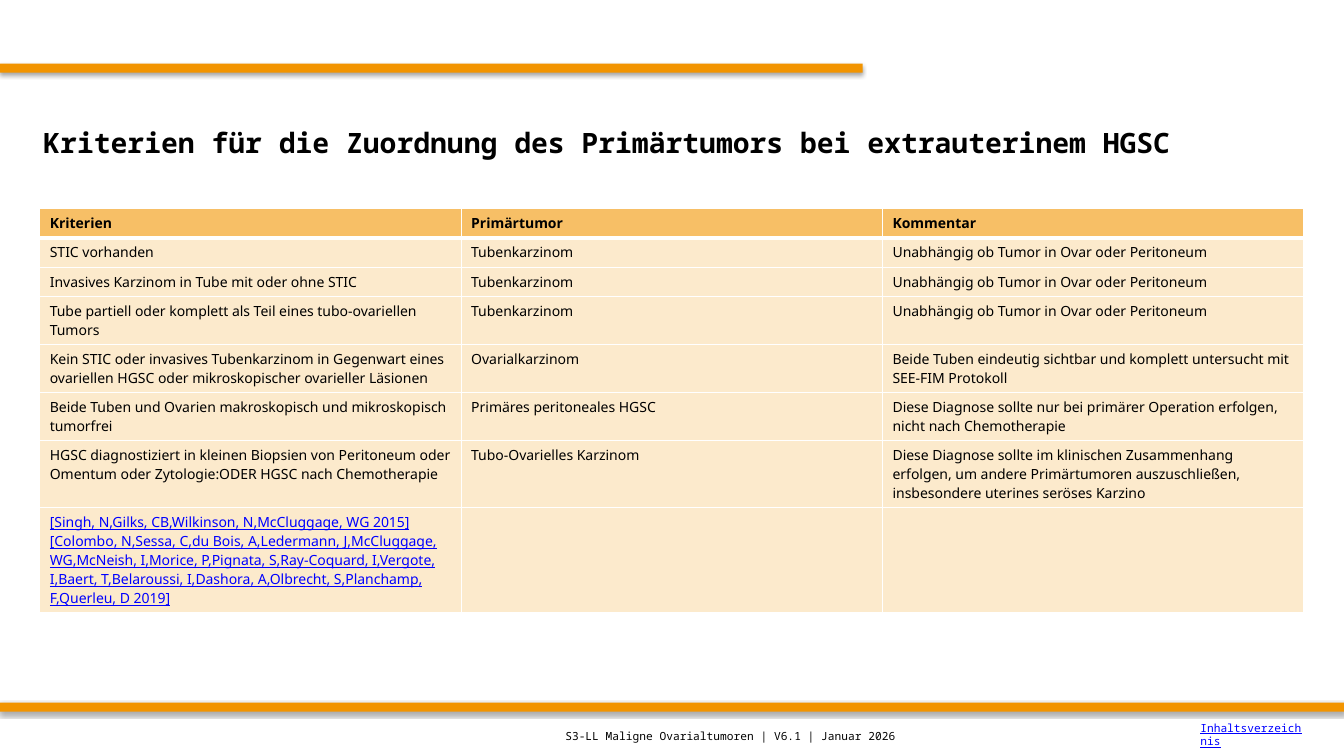
from dataclasses import dataclass

from lxml import etree
from pptx import Presentation
from pptx import util as u
from pptx.dml.color import RGBColor
from pptx.enum import shapes, text
from pptx.oxml import parse_xml
from pptx.oxml.ns import nsdecls, qn


@dataclass(frozen=True)
class Theme:
    bar: str = "F29400"
    header: str = "F7BF66"
    body: str = "FCEACC"
    ink: str = "000000"
    link: str = "0000FF"
    border: str = "FFFFFF"
    sans: str = "Noto Sans"
    mono: str = "Noto Sans Mono"
    title_size: float = 20
    table_size: float = 10
    footer_size: float = 8


theme = Theme()


def add_run(p, words, size, font, bold=False, link=False):
    r = p.add_run()
    r.text = words
    r.font.size = u.Pt(size)
    r.font.name = font
    r.font.bold = bold
    r.font.underline = link
    r.font.color.rgb = RGBColor.from_string(theme.link if link else theme.ink)


prs = Presentation()
prs.slide_width, prs.slide_height = u.Pt(960), u.Pt(540)
s = prs.slides.add_slide(prs.slide_layouts[5])

for top, width in ((45.4, 616.2), (501.8, 960)):
    sp = s.shapes.add_shape(shapes.MSO_SHAPE.RECTANGLE, 0, u.Pt(top), u.Pt(width), u.Pt(6.5))
    sp.fill.solid()
    sp.fill.fore_color.rgb = RGBColor.from_string(theme.bar)
    sp.line.fill.background()
    sp.shadow.inherit = False
    effects = sp.element.spPr.find(qn("a:effectLst"))
    effects.append(parse_xml(
        f'<a:outerShdw {nsdecls("a")} blurRad="{u.Pt(3.1)}" dist="{u.Pt(1.8)}" dir="5400000" rotWithShape="0">'
        '<a:srgbClr val="000000"><a:alpha val="35000"/></a:srgbClr></a:outerShdw>'))

title = s.shapes.title
title.left, title.top, title.width, title.height = u.Pt(23.8), u.Pt(59.8), u.Pt(912), u.Pt(84)
tf = title.text_frame
tf.word_wrap = True
tf.auto_size = text.MSO_AUTO_SIZE.NONE
tf.vertical_anchor = text.MSO_ANCHOR.MIDDLE
p = tf.paragraphs[0]
p.alignment = text.PP_ALIGN.LEFT
add_run(p, "Kriterien für die Zuordnung des Primärtumors bei extrauterinem HGSC",
        theme.title_size, theme.mono, bold=True)

either_site = "Unabhängig ob Tumor in Ovar oder Peritoneum"
criteria = [
    (1, "Kriterien", "Primärtumor", "Kommentar"),
    (1, "STIC vorhanden", "Tubenkarzinom", either_site),
    (1, "Invasives Karzinom in Tube mit oder ohne STIC", "Tubenkarzinom", either_site),
    (2, "Tube partiell oder komplett als Teil eines tubo-ovariellen Tumors", "Tubenkarzinom", either_site),
    (2, "Kein STIC oder invasives Tubenkarzinom in Gegenwart eines ovariellen HGSC oder "
        "mikroskopischer ovarieller Läsionen",
     "Ovarialkarzinom",
     "Beide Tuben eindeutig sichtbar und komplett untersucht mit SEE-FIM Protokoll"),
    (2, "Beide Tuben und Ovarien makroskopisch und mikroskopisch tumorfrei",
     "Primäres peritoneales HGSC",
     "Diese Diagnose sollte nur bei primärer Operation erfolgen, nicht nach Chemotherapie"),
    (3, "HGSC diagnostiziert in kleinen Biopsien von Peritoneum oder Omentum oder "
        "Zytologie:ODER HGSC nach Chemotherapie",
     "Tubo-Ovarielles Karzinom",
     "Diese Diagnose sollte im klinischen Zusammenhang erfolgen, um andere Primärtumoren "
     "auszuschließen, insbesondere uterines seröses Karzino"),
    (5, "[Singh, N,Gilks, CB,Wilkinson, N,McCluggage, WG 2015][Colombo, N,Sessa, C,du Bois, A,"
        "Ledermann, J,McCluggage, WG,McNeish, I,Morice, P,Pignata, S,Ray-Coquard, I,Vergote, I,"
        "Baert, T,Belaroussi, I,Dashora, A,Olbrecht, S,Planchamp, F,Querleu, D 2019]", "", ""),
]
line_height, cell_padding = 13.6, 7.2
table_height = sum(line_height * row[0] + cell_padding for row in criteria)
table = s.shapes.add_table(len(criteria), 3, u.Pt(28.4), u.Pt(149.2), u.Pt(903), u.Pt(table_height)).table
table.first_row = True
table.horz_banding = False

for i, (lines, *entries) in enumerate(criteria):
    table.rows[i].height = u.Pt(line_height * lines + cell_padding)
    borders = {"lnL": 1, "lnR": 1, "lnT": 3 if i == 1 else 1, "lnB": 3 if i == 0 else 1}
    for j, entry in enumerate(entries):
        cell = table.cell(i, j)
        tcPr = cell._tc.get_or_add_tcPr()
        for side, weight in borders.items():
            ln = etree.SubElement(tcPr, qn(f"a:{side}"), w=str(u.Pt(weight)))
            fill = etree.SubElement(ln, qn("a:solidFill"))
            etree.SubElement(fill, qn("a:srgbClr"), val=theme.border)
        cell.fill.solid()
        cell.fill.fore_color.rgb = RGBColor.from_string(theme.body if i else theme.header)
        p = cell.text_frame.paragraphs[0]
        if entry:
            p.space_after = u.Pt(5)
            add_run(p, entry, theme.table_size, theme.sans, bold=i == 0, link=i == len(criteria) - 1)
        else:
            p.font.size = u.Pt(theme.table_size)

footers = [
    ("S3-LL Maligne Ovarialtumoren | V6.1 | Januar 2026", 396.7, 511.9, 396.7, False),
    ("Inhaltsverzeichnis", 850.3, 510.5, 87.8, True),
]
for words, left, top, width, link in footers:
    tf = s.shapes.add_textbox(u.Pt(left), u.Pt(top), u.Pt(width), u.Pt(28)).text_frame
    tf.word_wrap = True
    tf.vertical_anchor = text.MSO_ANCHOR.MIDDLE
    add_run(tf.paragraphs[0], words, theme.footer_size, theme.mono, link=link)

prs.save("out.pptx")
